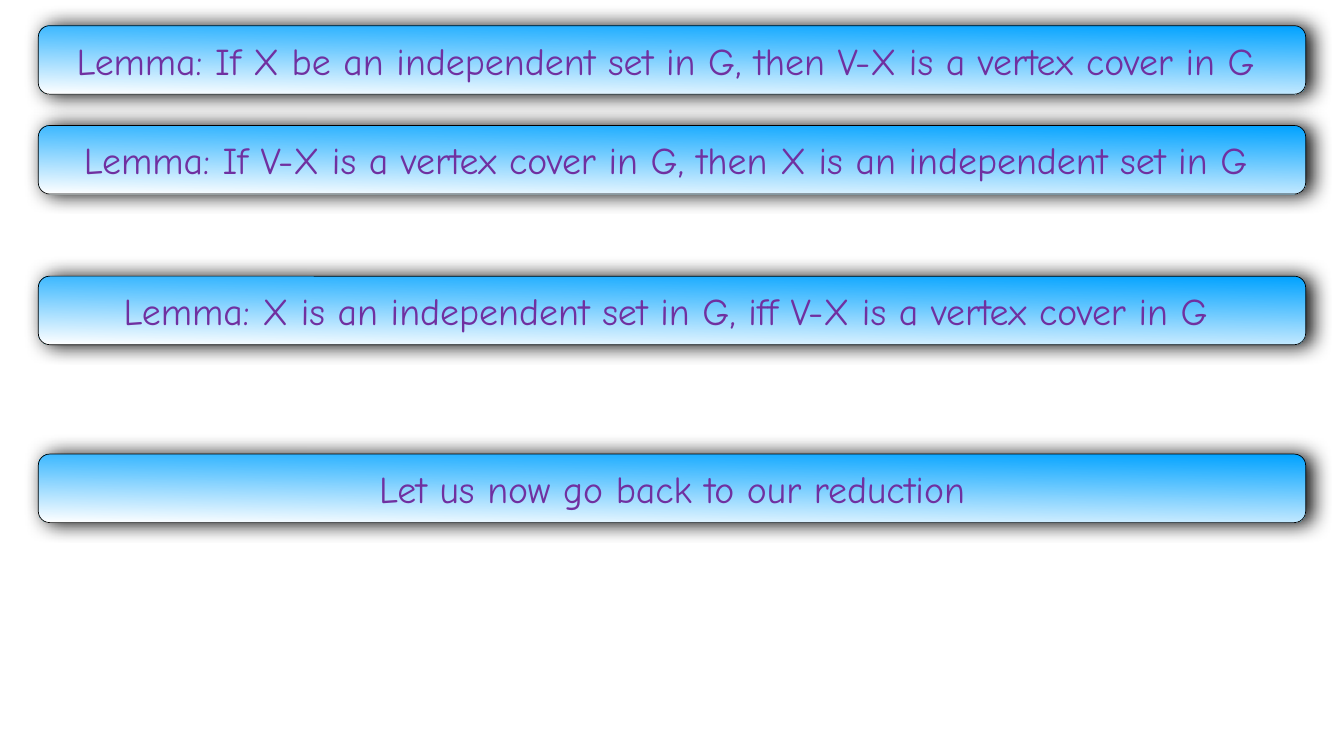
from dataclasses import dataclass

from lxml import etree
from pptx import Presentation
from pptx import util as u
from pptx.dml.color import RGBColor
from pptx.enum import shapes, text
from pptx.oxml import ns

LEFT, WIDTH, HEIGHT = 0.76, 25.15, 1.36
INSET = 0.06
BLUE, WHITE, BLACK, PURPLE = "00A2FF", "FFFFFF", "000000", "7030A0"


@dataclass
class Banner:
    top: float
    wording: str


BANNERS = [
    Banner(0.51, "Lemma: If X be an independent set in G, then V-X is a vertex cover in G "),
    Banner(2.49, "Lemma: If V-X is a vertex cover in G, then X is an independent set in G "),
    Banner(5.48, "Lemma: X is an independent set in G, iff V-X is a vertex cover in G "),
    Banner(9.01, "Let us now go back to our reduction"),
]


def colour(code: str) -> RGBColor:
    return RGBColor.from_string(code)


def add_shadow(shape, blur: float, distance: float, opacity: int) -> None:
    """Give the shape a soft black shadow cast to the right."""
    shape.shadow.inherit = False
    effects = shape._element.spPr.find(ns.qn("a:effectLst"))
    shadow = etree.SubElement(
        effects, ns.qn("a:outerShdw"), blurRad=str(u.Pt(blur)),
        dist=str(u.Pt(distance)), dir="0", algn="ctr", rotWithShape="0")
    black = etree.SubElement(shadow, ns.qn("a:srgbClr"), val=BLACK)
    etree.SubElement(black, ns.qn("a:alpha"), val=str(opacity * 1000))


def add_banner(page, banner: Banner) -> None:
    box = page.shapes.add_shape(
        shapes.MSO_SHAPE.ROUNDED_RECTANGLE, u.Inches(LEFT), u.Inches(banner.top),
        u.Inches(WIDTH), u.Inches(HEIGHT))

    # Gradient, outline and shadow
    box.fill.gradient()
    box.fill.gradient_angle = 269  # counter-clockwise: just past straight down
    for stop, code in zip(box.fill.gradient_stops, (BLUE, WHITE)):
        stop.color.rgb = colour(code)
    box.line.color.rgb = colour(BLACK)
    box.line.width = u.Pt(1)
    add_shadow(box, blur=28, distance=9, opacity=97)

    # Centred wording
    frame = box.text_frame
    frame.text = banner.wording
    frame.word_wrap = True
    frame.vertical_anchor = text.MSO_ANCHOR.MIDDLE
    frame.margin_left = frame.margin_right = u.Inches(INSET)
    frame.margin_top = frame.margin_bottom = u.Inches(INSET)
    para = frame.paragraphs[0]
    para.alignment = text.PP_ALIGN.CENTER
    font = para.runs[0].font
    font.name = "Comic Neue"
    font.size = u.Pt(54)
    font.color.rgb = colour(PURPLE)


def main() -> None:
    deck = Presentation()
    deck.slide_width, deck.slide_height = u.Inches(26.67), u.Inches(15)
    page = deck.slides.add_slide(deck.slide_layouts[6])
    for banner in BANNERS:
        add_banner(page, banner)
    deck.save("out.pptx")


if __name__ == "__main__":
    main()
